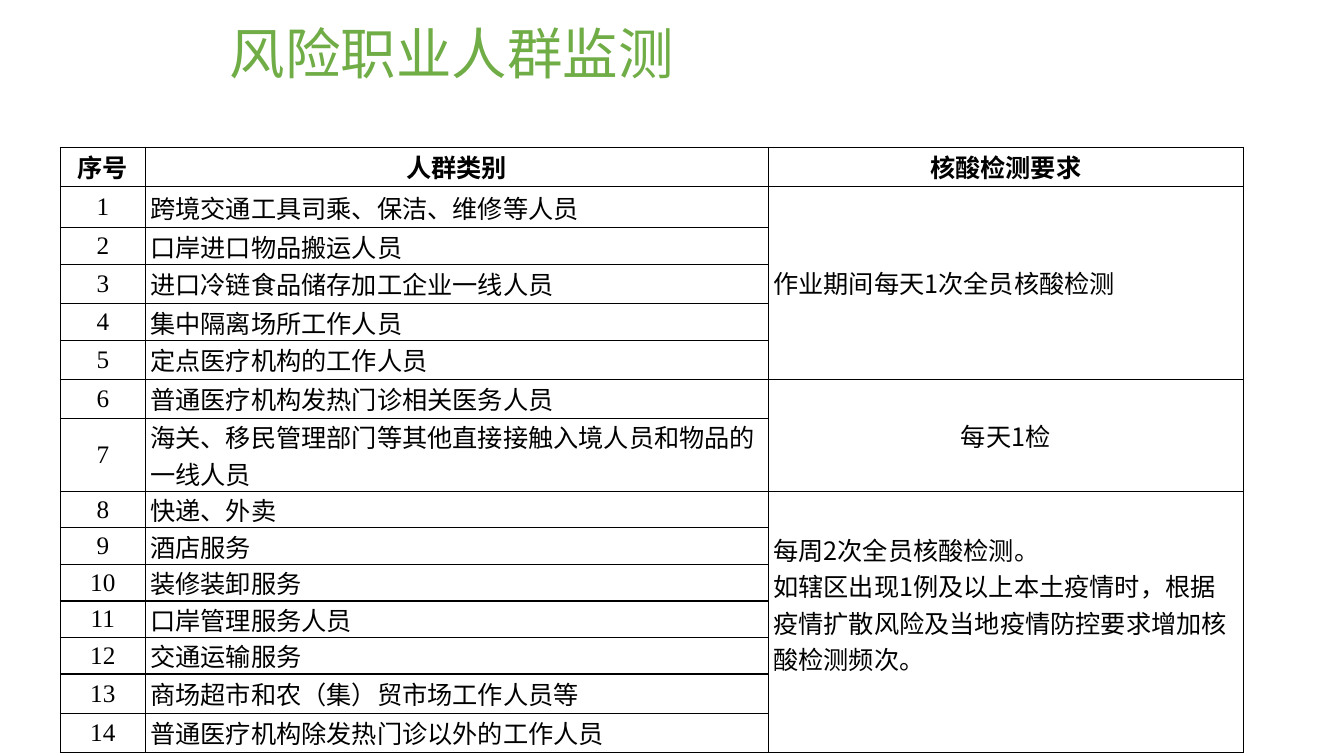
"""Build the slide on testing rules for occupational risk groups."""
from lxml.etree import SubElement
from pptx import Presentation
from pptx.dml.color import RGBColor
from pptx.enum.text import MSO_ANCHOR as Anchor, PP_ALIGN as Align
from pptx.oxml.ns import qn
from pptx.util import Inches, Pt

TITLE = "风险职业人群监测"
HEADERS = ["序号", "人群类别", "核酸检测要求"]
RULES = [
    (["作业期间每天1次全员核酸检测"], Align.LEFT, 0, [
        ("跨境交通工具司乘、保洁、维修等人员", 0.41),
        ("口岸进口物品搬运人员", 0.3),
        ("进口冷链食品储存加工企业一线人员", 0.39),
        ("集中隔离场所工作人员", 0.37),
        ("定点医疗机构的工作人员", 0.38),
    ]),
    (["每天1检"], Align.CENTER, 0, [
        ("普通医疗机构发热门诊相关医务人员", 0.39),
        ("海关、移民管理部门等其他直接接触入境人员和物品的一线人员", 0.59),
    ]),
    (["每周2次全员核酸检测。",
      "如辖区出现1例及以上本土疫情时，根据疫情扩散风险及当地疫情防控要求增加核酸检测频次。"],
     Align.LEFT, 0.36, [
        ("快递、外卖", 0.35),
        ("酒店服务", 0.3),
        ("装修装卸服务", 0.3),
        ("口岸管理服务人员", 0.3),
        ("交通运输服务", 0.3),
        ("商场超市和农（集）贸市场工作人员等", 0.39),
        ("普通医疗机构除发热门诊以外的工作人员", 0.39),
    ]),
]
COLUMN_WIDTHS = [0.84, 6.18, 4.71]
HEADER_HEIGHT = 0.39
COLORS = {"title": "70AD47", "text": "000000", "border": "000000"}
SANS, SERIF = "Noto Sans CJK SC", "Times New Roman"


def style_paragraph(para, size, color, face=SANS, bold=False, align=Align.LEFT):
    """Set the font, for Latin and East Asian text, and the alignment."""
    para.alignment = align
    font = para.font
    font.size, font.bold, font.name = Pt(size), bold, face
    font.color.rgb = RGBColor.from_string(COLORS[color])
    properties = para._p.get_or_add_pPr().find(qn("a:defRPr"))
    SubElement(properties, qn("a:ea")).set("typeface", face)


def frame_cell(cell):
    """Give a cell thin borders on all sides and no fill."""
    properties = cell._tc.get_or_add_tcPr()
    for side in ("lnL", "lnR", "lnT", "lnB"):
        line = SubElement(properties, qn(f"a:{side}"), w=str(Pt(1)))
        fill = SubElement(line, qn("a:solidFill"))
        SubElement(fill, qn("a:srgbClr"), val=COLORS["border"])
    cell.fill.background()


def write_cell(cell, lines, bottom=0, **style):
    """Write one paragraph per line, centred vertically."""
    cell.vertical_anchor = Anchor.MIDDLE
    cell.margin_left = cell.margin_right = Inches(0.05)
    cell.margin_top, cell.margin_bottom = 0, Inches(bottom)
    cell.text = "\n".join(lines)
    for para in cell.text_frame.paragraphs:
        style_paragraph(para, 18, "text", **style)


def add_title(page):
    """Place and format the title placeholder."""
    title = page.shapes.title
    title.left, title.top = Inches(2.18), Inches(0.29)
    title.width, title.height = Inches(9), Inches(0.55)
    title.text = TITLE
    title.text_frame.vertical_anchor = Anchor.MIDDLE
    para = title.text_frame.paragraphs[0]
    para.line_spacing = 0.9
    style_paragraph(para, 39.6, "title")


def add_rules_table(page):
    """Add the table, merging the requirement over each set of groups."""
    heights = [HEADER_HEIGHT] + [height for *_, groups in RULES for _, height in groups]
    table = page.shapes.add_table(
        len(heights), len(HEADERS), Inches(0.6), Inches(1.46),
        Inches(sum(COLUMN_WIDTHS)), Inches(sum(heights))).table
    table.first_row = table.horz_banding = False
    for column, width in zip(table.columns, COLUMN_WIDTHS):
        column.width = Inches(width)
    for row, height in zip(table.rows, heights):
        row.height = Inches(height)
    for cell in table.iter_cells():
        frame_cell(cell)
    for index, header in enumerate(HEADERS):
        write_cell(table.cell(0, index), [header], bold=True, align=Align.CENTER)
    first = 1
    for lines, align, bottom, groups in RULES:
        for number, (group, _) in enumerate(groups, first):
            write_cell(table.cell(number, 0), [str(number)], face=SERIF, align=Align.CENTER)
            write_cell(table.cell(number, 1), [group])
        requirement = table.cell(first, 2)
        requirement.merge(table.cell(first + len(groups) - 1, 2))
        write_cell(requirement, lines, bottom, align=align)
        first += len(groups)


def main():
    """Create the deck and save it."""
    deck = Presentation()
    deck.slide_width, deck.slide_height = Inches(13.33), Inches(7.5)
    page = deck.slides.add_slide(deck.slide_layouts[5])
    add_title(page)
    add_rules_table(page)
    deck.save("out.pptx")


if __name__ == "__main__":
    main()
